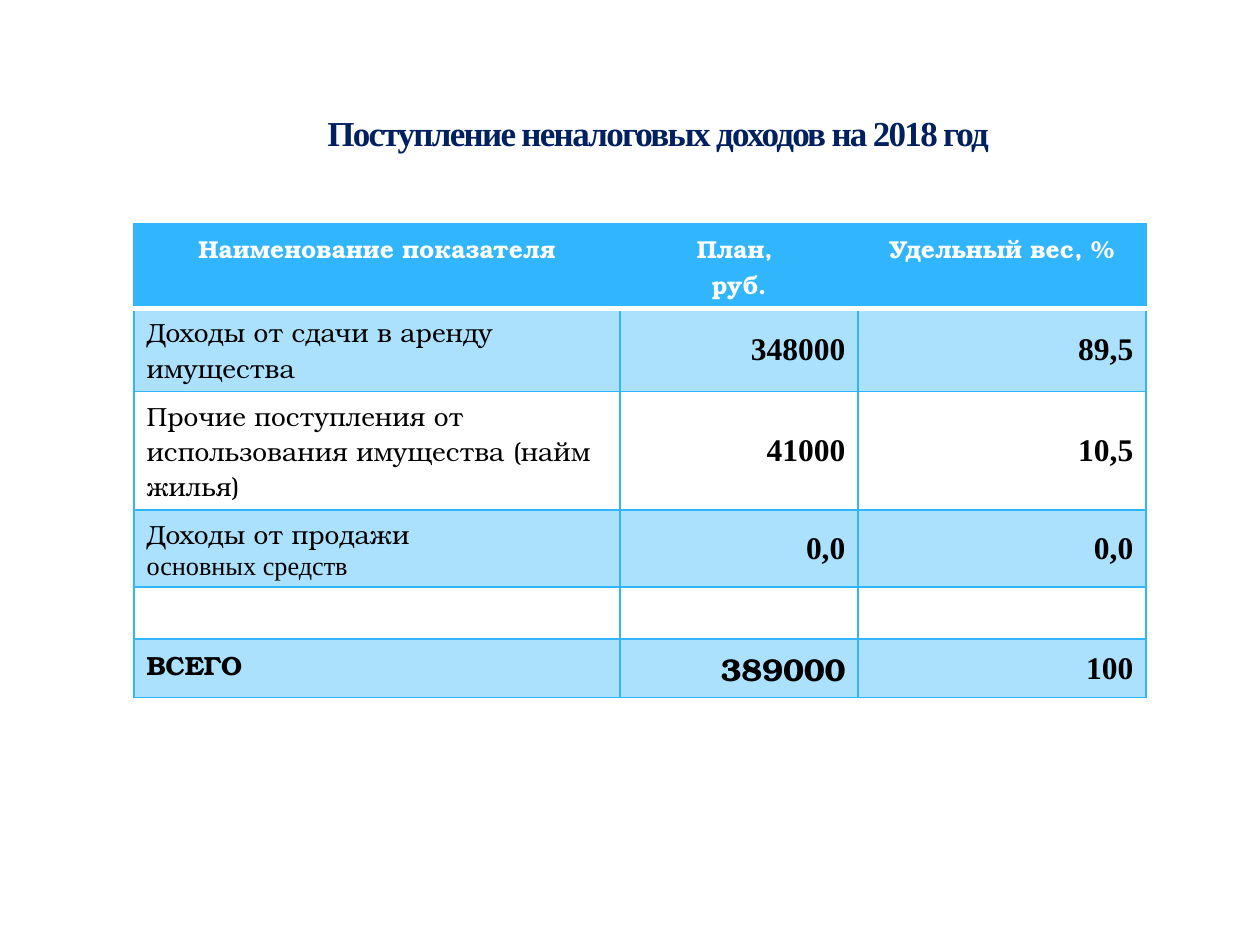
import pptx
import pptx.util
import pptx.dml.color
import pptx.enum.text
import pptx.oxml
import pptx.oxml.ns
from dataclasses import dataclass


@dataclass(frozen=True)
class Theme:
    navy: str = "002060"
    blue: str = "31B6FD"
    white: str = "FFFFFF"
    black: str = "000000"
    edge: str = "AFCCDE"
    serif: str = "Times New Roman"
    book: str = "TeX Gyre Bonum"
    title: int = 20
    head: int = 14
    label: int = 15
    value: int = 18


T = Theme()
TITLE = "Поступление неналоговых доходов на 2018 год"
HEADS = [["Наименование показателя"], ["План, ", "руб."], ["Удельный вес, %"]]
ROWS = [
    (["Доходы от сдачи в аренду имущества"], "348000", "89,5"),
    (["Прочие поступления от использования имущества (найм жилья)"], "41000", "10,5"),
    (["Доходы от продажи", "основных средств"], "0,0", "0,0"),
    ([], "", ""),
    (["ВСЕГО"], "389000", "100"),
]
COLS = [486, 238, 288]
HIGH = 52
GRID = (134, 224, sum(COLS), 407)
HEAD = (174, 86, 968, 93)
ALIGN = pptx.enum.text.PP_ALIGN
MID = pptx.enum.text.MSO_ANCHOR.MIDDLE
TOP = pptx.enum.text.MSO_ANCHOR.TOP


def px(n):
    return pptx.util.Emu(round(n * 914400 / 126))


def paint(hue, alpha=100):
    return (f'<a:solidFill><a:srgbClr val="{hue}">'
            f'<a:alpha val="{alpha * 1000}"/></a:srgbClr></a:solidFill>')


def node(tag, attrs, inner):
    space = pptx.oxml.ns.nsdecls("a")
    return pptx.oxml.parse_xml(f"<a:{tag} {space} {attrs}>{inner}</a:{tag}>")


def write(para, text, size, face, hue, bold, align):
    para.alignment = align
    run = para.add_run()
    run.text = text
    font = run.font
    font.size = pptx.util.Pt(size)
    font.name = face
    font.bold = bold
    font.color.rgb = pptx.dml.color.RGBColor.from_string(hue)
    return run


def style(cell, row, fill):
    props = cell._tc.get_or_add_tcPr()
    for side in "LRTB":
        rule = (row, side) in ((0, "B"), (1, "T"))
        hue, wide = (T.white, 3) if rule else (T.blue, 1)
        props.append(node(f"ln{side}", f'w="{wide * 12700}"', paint(hue)))
    if fill:
        props.append(node("solidFill", "", f'<a:srgbClr val="{T.blue}">'
                          f'<a:alpha val="{fill * 1000}"/></a:srgbClr>'))
    else:
        props.append(node("noFill", "", ""))


def put(cell, lines, anchor, *looks):
    cell.vertical_anchor = anchor
    frame = cell.text_frame
    for i, text in enumerate(lines):
        para = frame.add_paragraph() if i else frame.paragraphs[0]
        write(para, text, *looks[min(i, len(looks) - 1)])


def add_title(slide):
    shape = slide.shapes.title
    shape.left, shape.top, shape.width, shape.height = map(px, HEAD)
    frame = shape.text_frame
    frame.word_wrap = True
    frame.vertical_anchor = MID
    run = write(frame.paragraphs[0], TITLE, T.title, T.serif, T.navy, True, ALIGN.CENTER)
    props = run._r.get_or_add_rPr()
    props.set("spc", "-100")
    props.insert(0, node("ln", 'w="3175"', paint(T.edge, 25)))


def add_grid(slide):
    frame = slide.shapes.add_table(len(ROWS) + 1, len(COLS), *map(px, GRID))
    table = frame.table
    table.horz_banding = False
    table.first_row = False
    for col, wide in zip(table.columns, COLS):
        col.width = px(wide)
    for row in table.rows:
        row.height = px(HIGH)
    frame.height = px(GRID[3])

    for c, lines in enumerate(HEADS):
        cell = table.cell(0, c)
        put(cell, lines, TOP, (T.head, T.book, T.white, True, ALIGN.CENTER))
        style(cell, 0, 100)

    for r, (name, plan, share) in enumerate(ROWS, 1):
        total = r == len(ROWS)
        label = [(T.label, face, T.black, total, ALIGN.LEFT) for face in (T.book, T.serif)]
        put(table.cell(r, 0), name, TOP, *label)
        for c, text in enumerate((plan, share), 1):
            face = T.book if total and c == 1 else T.serif
            put(table.cell(r, c), [text] if text else [], MID,
                (T.value, face, T.black, True, ALIGN.RIGHT))
        for c in range(len(COLS)):
            style(table.cell(r, c), r, 40 if r % 2 else 0)


def main():
    deck = pptx.Presentation()
    deck.slide_width, deck.slide_height = px(1260), px(945)
    slide = deck.slides.add_slide(deck.slide_layouts[5])
    add_title(slide)
    add_grid(slide)
    deck.save("out.pptx")


if __name__ == "__main__":
    main()
